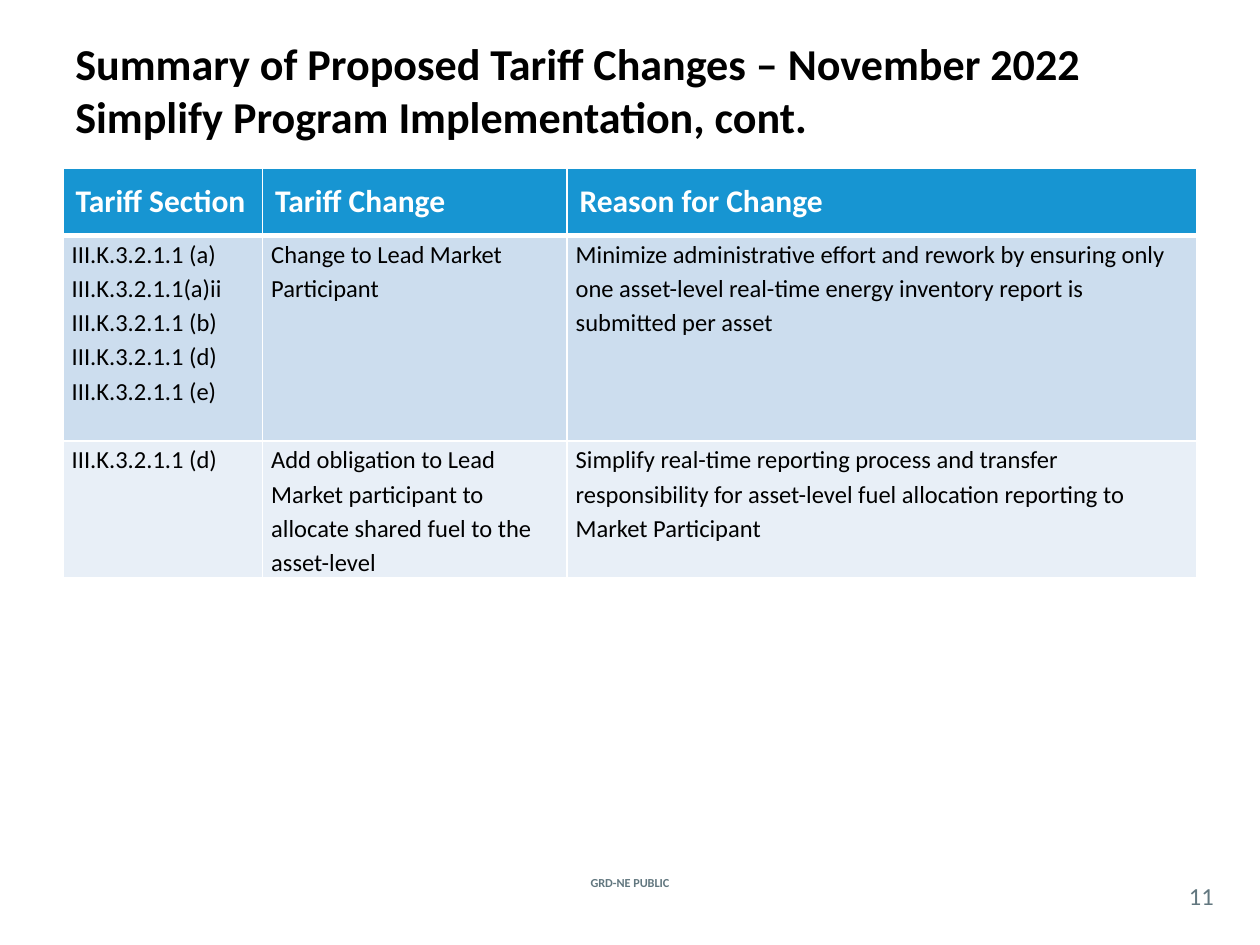
from lxml.etree import SubElement
from pptx import Presentation
from pptx.dml.color import RGBColor
from pptx.enum.text import MSO_ANCHOR as ANCHOR, PP_ALIGN as ALIGN
from pptx.oxml.ns import qn
from pptx.util import Pt

FONT = "Calibri"
COLORS = {
    "black": "000000", "white": "FFFFFF", "gray": "62777F",
    "header": "1795D2", "band": "CCDDEE", "light": "E8EFF7",
}
COLUMNS = [114, 174, 360]
ROW_HEIGHTS = [38.5, 117.5, 78]
ROWS = [
    ["Tariff Section", "Tariff Change", "Reason for Change"],
    ["III.K.3.2.1.1 (a)\nIII.K.3.2.1.1(a)ii\nIII.K.3.2.1.1 (b)\n"
     "III.K.3.2.1.1 (d)\nIII.K.3.2.1.1 (e)",
     "Change to Lead Market Participant",
     "Minimize administrative effort and rework by ensuring only one "
     "asset-level real-time energy inventory report is submitted per asset"],
    ["III.K.3.2.1.1 (d)",
     "Add obligation to Lead Market participant to allocate shared fuel "
     "to the asset-level",
     "Simplify real-time reporting process and transfer responsibility for "
     "asset-level fuel allocation reporting to Market Participant"],
]


def rgb(name):
    return RGBColor.from_string(COLORS[name])


def style(tf, size, color, bold=False, align=ALIGN.LEFT, spacing=None):
    for p in tf.paragraphs:
        p.alignment = align
        p.line_spacing = spacing
        p.font.name, p.font.size, p.font.bold = FONT, Pt(size), bold
        p.font.color.rgb = rgb(color)


def set_margins(target, horizontal, vertical):
    target.margin_left = target.margin_right = Pt(horizontal)
    target.margin_top = target.margin_bottom = Pt(vertical)


def add_text(slide, box, text, size, color, bold=False, align=ALIGN.LEFT,
             margins=(7.2, 3.6)):
    tf = slide.shapes.add_textbox(*map(Pt, box)).text_frame
    tf.word_wrap = True
    tf.vertical_anchor = ANCHOR.MIDDLE
    set_margins(tf, *margins)
    tf.text = text
    style(tf, size, color, bold, align)


def set_borders(cell, bottom):
    tcPr = cell._tc.get_or_add_tcPr()
    for side, width in zip("LRTB", (1, 1, 1, bottom)):
        ln = SubElement(tcPr, qn(f"a:ln{side}"), w=str(Pt(width)))
        fill = SubElement(ln, qn("a:solidFill"))
        SubElement(fill, qn("a:srgbClr"), val=COLORS["white"])


def add_title(slide, box):
    add_text(slide, box,
             "Summary of Proposed Tariff Changes – November 2022\v"
             "Simplify Program Implementation, cont.", 25.2, "black", True)


def add_tariff_table(slide, left, top):
    table = slide.shapes.add_table(
        len(ROWS), len(COLUMNS), Pt(left), Pt(top),
        Pt(sum(COLUMNS)), Pt(sum(ROW_HEIGHTS))).table
    for column, width in zip(table.columns, COLUMNS):
        column.width = Pt(width)
    for i, (row, height) in enumerate(zip(table.rows, ROW_HEIGHTS)):
        row.height = Pt(height)
        is_header = i == 0
        for cell, text in zip(row.cells, ROWS[i]):
            cell.text = text
            set_borders(cell, 3 if is_header else 1)
            cell.fill.solid()
            cell.fill.fore_color.rgb = rgb(("header", "band", "light")[i])
            if is_header:
                cell.vertical_anchor = ANCHOR.MIDDLE
                set_margins(cell, 7.2, 3.6)
                style(cell.text_frame, 18, "white", True)
            else:
                set_margins(cell, 5, 0)
                style(cell.text_frame, 14, "black", spacing=1.15)


def add_footer(slide, left, top):
    # Classification label and page number
    add_text(slide, (left, top, 106, 12), "GRD-NE PUBLIC", 7, "gray", True,
             ALIGN.CENTER, (0, 0))
    add_text(slide, (left + 364.5, top + 3, 30, 21), "11", 14, "gray",
             align=ALIGN.CENTER, margins=(0, 0))


def main():
    prs = Presentation()
    prs.slide_width, prs.slide_height = Pt(720), Pt(540)
    slide = prs.slides.add_slide(prs.slide_layouts[6])
    add_title(slide, (36, 6, 648, 90))
    add_tariff_table(slide, 36, 96)
    add_footer(slide, 307, 498.5)
    prs.save("out.pptx")


if __name__ == "__main__":
    main()
